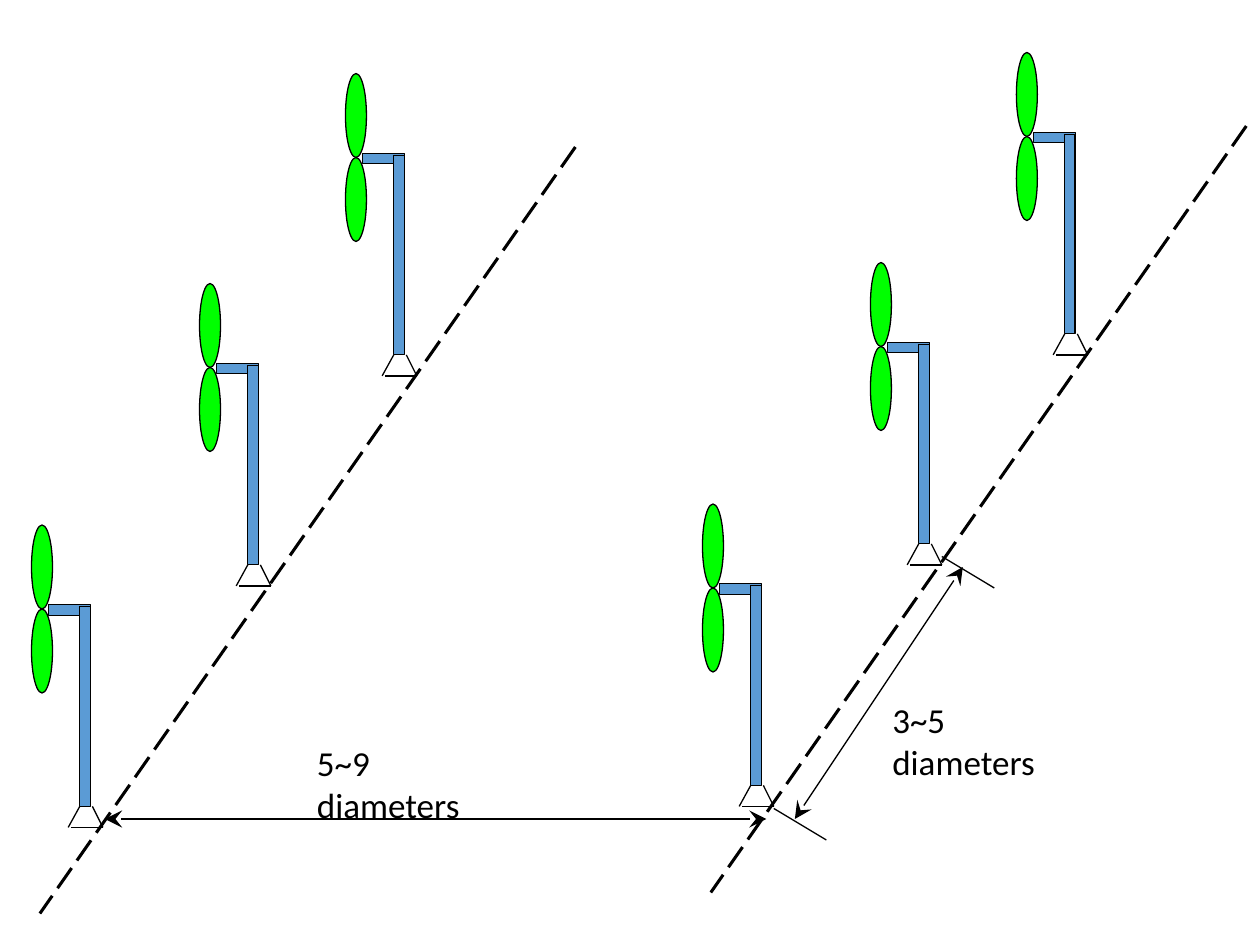
from pptx import Presentation
from pptx import util as u
from pptx.dml.color import RGBColor
from pptx.enum import dml, shapes, text
from pptx.oxml.ns import qn
from lxml import etree

PX = u.Inches(1) // 120
BLACK = RGBColor(0x00, 0x00, 0x00)
BLADE_GREEN = RGBColor(0x00, 0xFF, 0x00)
TOWER_BLUE = RGBColor(0x5B, 0x9B, 0xD5)
RECT = shapes.MSO_SHAPE.RECTANGLE
OVAL = shapes.MSO_SHAPE.OVAL

TURBINES = [(329, 70), (190, 270), (30, 500)]
ROW_SHIFT = (639, -20)


class Diagram:
    font = "Calibri"
    size = u.Pt(20)
    thin = u.Pt(0.75)
    thick = u.Pt(1.75)

    def __init__(self, slide):
        self.slide = slide

    def solid(self, parent, kind, fill, left, top, width, height):
        part = parent.add_shape(kind, left * PX, top * PX, width * PX, height * PX)
        part.shadow.inherit = False
        part.fill.solid()
        part.fill.fore_color.rgb = fill
        part.line.color.rgb = BLACK
        part.line.width = self.thin

    def line(self, parent, x1, y1, x2, y2, dashed=False, arrows=False):
        stroke = parent.add_connector(
            shapes.MSO_CONNECTOR.STRAIGHT, x1 * PX, y1 * PX, x2 * PX, y2 * PX)
        stroke.line.color.rgb = BLACK
        stroke.line.width = self.thick if dashed else self.thin
        if dashed:
            stroke.line.dash_style = dml.MSO_LINE.LONG_DASH
        if arrows:
            outline = stroke.line._get_or_add_ln()
            for end in ("a:headEnd", "a:tailEnd"):
                etree.SubElement(outline, qn(end), type="stealth", w="lg", len="lg")
        etree.SubElement(stroke._element.spPr, qn("a:effectLst"))

    def turbine(self, parent, x, y):
        group = parent.add_group_shape().shapes
        self.solid(group, RECT, TOWER_BLUE, x + 16, y + 76, 40, 10)
        for blade_top in (y, y + 80):
            self.solid(group, OVAL, BLADE_GREEN, x, blade_top, 20, 80)
        self.solid(group, RECT, TOWER_BLUE, x + 46, y + 78, 10, 190)
        base, foot = y + 268, y + 288
        self.line(group, x + 38, foot, x + 68, foot)
        self.line(group, x + 58, base, x + 68, foot)
        self.line(group, x + 46, base, x + 35, foot)

    def row(self, dx, dy):
        group = self.slide.shapes.add_group_shape().shapes
        for x, y in TURBINES:
            self.turbine(group, x + dx, y + dy)
        self.line(group, 548 + dx, 140 + dy, 38 + dx, 870 + dy, dashed=True)

    def label(self, wording, left, top):
        box = self.slide.shapes.add_textbox(left * PX, top * PX, 212 * PX, 53 * PX)
        frame = box.text_frame
        frame.word_wrap = True
        frame.auto_size = text.MSO_AUTO_SIZE.SHAPE_TO_FIT_TEXT
        run = frame.paragraphs[0].add_run()
        run.text = wording
        run.font.name = self.font
        run.font.size = self.size
        run.font.color.rgb = BLACK


def main():
    deck = Presentation()
    deck.slide_width = 1200 * PX
    deck.slide_height = 900 * PX
    diagram = Diagram(deck.slides.add_slide(deck.slide_layouts[6]))
    canvas = diagram.slide.shapes

    diagram.row(0, 0)
    diagram.line(canvas, 100, 780, 730, 780, arrows=True)
    diagram.label("5~9 diameters", 290, 700)

    diagram.row(*ROW_SHIFT)
    diagram.line(canvas, 917, 540, 757, 780, arrows=True)
    for x, y in [(737, 770), (897, 530)]:
        diagram.line(canvas, x, y, x + 50, y + 30)
    diagram.label("3~5 diameters", 838, 659)

    deck.save("out.pptx")


if __name__ == "__main__":
    main()
